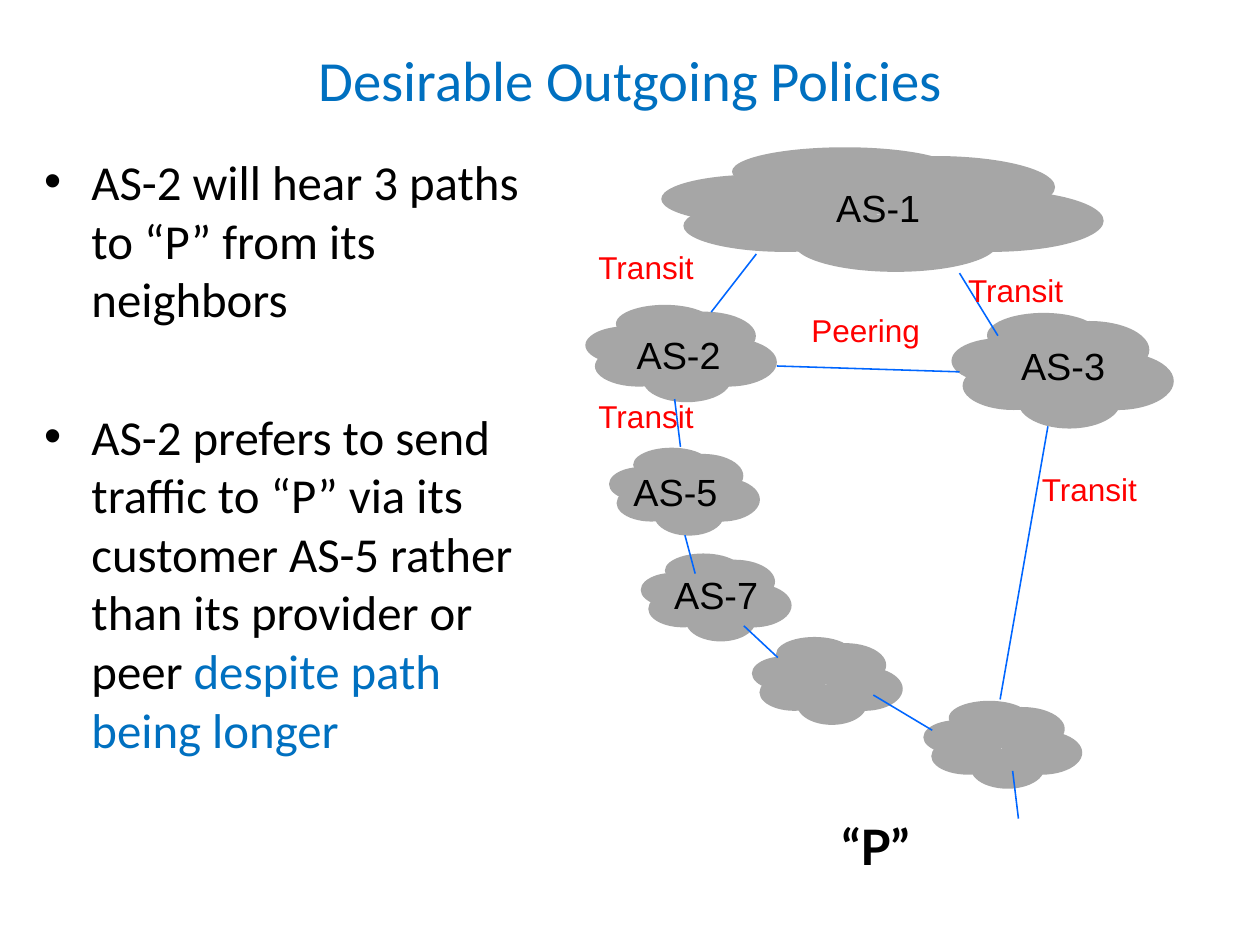
from lxml import etree
from pptx import Presentation
from pptx.dml.color import RGBColor
from pptx.enum.shapes import MSO_CONNECTOR as CONN, MSO_SHAPE as SHAPE
from pptx.enum.text import MSO_ANCHOR as ANCHOR, PP_ALIGN as ALIGN
from pptx.oxml.ns import qn
from pptx.util import Cm, Pt

BLACK = RGBColor(0x00, 0x00, 0x00)
BLUE = RGBColor(0x00, 0x70, 0xC0)
LINK_BLUE = RGBColor(0x00, 0x66, 0xFF)
RED = RGBColor(0xFF, 0x00, 0x00)
GRAY = RGBColor(0xA6, 0xA6, 0xA6)

PUFFS = [
    (0, 0.22, 0.43, 0.39),
    (0.16, 0, 0.51, 0.39),
    (0.35, 0.07, 0.54, 0.5),
    (0.49, 0.34, 0.51, 0.5),
    (0.3, 0.54, 0.46, 0.46),
    (0.05, 0.42, 0.46, 0.42),
]
CLOUDS = [
    (3.31, 0, 9.91, 2.79),
    (1.61, 3.53, 4.29, 2.18),
    (9.81, 3.71, 4.98, 2.59),
    (2.14, 6.73, 3.38, 1.97),
    (2.85, 9.1, 3.38, 1.97),
    (5.34, 10.97, 3.38, 1.97),
    (9.18, 12.4, 3.56, 1.97),
]
LINKS = [
    (5.44, 2.39, 4.43, 3.69),
    (9.99, 5.03, 5.9, 4.9),
    (9.99, 2.82, 10.85, 4.22),
    (3.61, 5.64, 3.74, 6.71),
    (3.84, 8.69, 4.07, 9.55),
    (5.16, 10.72, 5.92, 11.43),
    (8.06, 12.27, 9.38, 13.06),
    (11.97, 6.25, 10.9, 12.37),
    (11.18, 13.97, 11.31, 15.04),
]
AS_NAMES = [
    ("AS-1", 8.17, 1.35),
    ("AS-2", 3.7, 4.65),
    ("AS-3", 12.31, 4.88),
    ("AS-5", 3.63, 7.7),
    ("AS-7", 4.54, 10.01),
]
RELATIONS = [
    ("Transit", 2.97, 2.68),
    ("Transit", 11.25, 3.19),
    ("Peering", 7.89, 4.1),
    ("Transit", 2.97, 6.01),
    ("Transit", 12.9, 7.66),
]
BULLETS = [
    (6, [("AS-2 will hear 3 paths to “P” from its neighbors", BLACK)]),
    (50, [("AS-2 prefers to send traffic to “P” via its customer AS-5 "
           "rather than its provider or peer ", BLACK),
          ("despite path being longer", BLUE)]),
]


def add_frame(s, box):
    """Add a wrapping text box with the slide's margins and return its frame."""
    tf = s.shapes.add_textbox(*map(Cm, box)).text_frame
    tf.word_wrap = True
    tf.margin_left = tf.margin_right = Cm(0.28)
    tf.margin_top = tf.margin_bottom = Cm(0.15)
    return tf


def style(r, size, color, name):
    """Set the font of a run."""
    r.font.size, r.font.name = Pt(size), name
    r.font.color.rgb = color


def add_label(s, box, text, size, color, name="Arial", align=ALIGN.CENTER):
    """Add a one-line text, centred vertically in its box."""
    tf = add_frame(s, box)
    tf.vertical_anchor = ANCHOR.MIDDLE
    p = tf.paragraphs[0]
    p.text, p.alignment = text, align
    style(p.runs[0], size, color, name)
    return p.runs[0]


def add_bullets(s, box):
    """Fill the box with the bulleted paragraphs."""
    tf = add_frame(s, box)
    for i, (space, parts) in enumerate(BULLETS):
        p = tf.add_paragraph() if i else tf.paragraphs[0]
        p.space_before = Pt(space)
        pPr = p._p.get_or_add_pPr()
        pPr.set("marL", str(Cm(1.06)))
        pPr.set("indent", str(-Cm(1.06)))
        etree.SubElement(pPr, qn("a:buFont")).set("typeface", "Arial")
        etree.SubElement(pPr, qn("a:buChar")).set("char", "•")
        for text, color in parts:
            r = p.add_run()
            r.text = text
            style(r, 31, color, "Calibri")


def add_cloud(s, box):
    """Add a cloud of overlapping ellipses that fills the box."""
    left, top, width, height = box
    group = s.shapes.add_group_shape()
    for x, y, w, h in PUFFS:
        sp = group.shapes.add_shape(
            SHAPE.OVAL, Cm(left + x * width), Cm(top + y * height),
            Cm(w * width), Cm(h * height))
        sp.shadow.inherit = False
        sp.fill.solid()
        sp.fill.fore_color.rgb = GRAY
        sp.line.fill.background()


def add_link(s, ends):
    """Add a thin blue line between two points."""
    cxn = s.shapes.add_connector(CONN.STRAIGHT, *map(Cm, ends))
    cxn.line.color.rgb = LINK_BLUE
    cxn.line.width = Pt(1)
    etree.SubElement(cxn._element.spPr, qn("a:effectLst"))


def add_network(s, left, top):
    """Draw the network of autonomous systems from the given corner."""
    for x, y, w, h in CLOUDS:
        add_cloud(s, (left + x, top + y, w, h))
    for x1, y1, x2, y2 in LINKS:
        add_link(s, (left + x1, top + y1, left + x2, top + y2))
    for labels, w, h, size, color in ((AS_NAMES, 2.8, 1.32, 24, BLACK),
                                      (RELATIONS, 5.8, 1.14, 20, RED)):
        for text, x, y in labels:
            box = (left + x - w / 2, top + y - h / 2, w, h)
            add_label(s, box, text, size, color)
    r = add_label(s, (left + 7.07, top + 14.84, 2.87, 1.63), "“P”", 31, BLACK,
                  "Lato", ALIGN.LEFT)
    r.font.bold = True


def main():
    """Build the slide and save it."""
    prs = Presentation()
    prs.slide_width, prs.slide_height = Cm(28.22), Cm(21.17)
    s = prs.slides.add_slide(prs.slide_layouts[6])
    add_label(s, (0.71, 0, 26.82, 3.53), "Desirable Outgoing Policies", 36,
              BLUE, "Calibri")
    add_bullets(s, (0.71, 3.25, 11.76, 15.82))
    add_network(s, 11.5, 3.3)
    prs.save("out.pptx")


if __name__ == "__main__":
    main()
